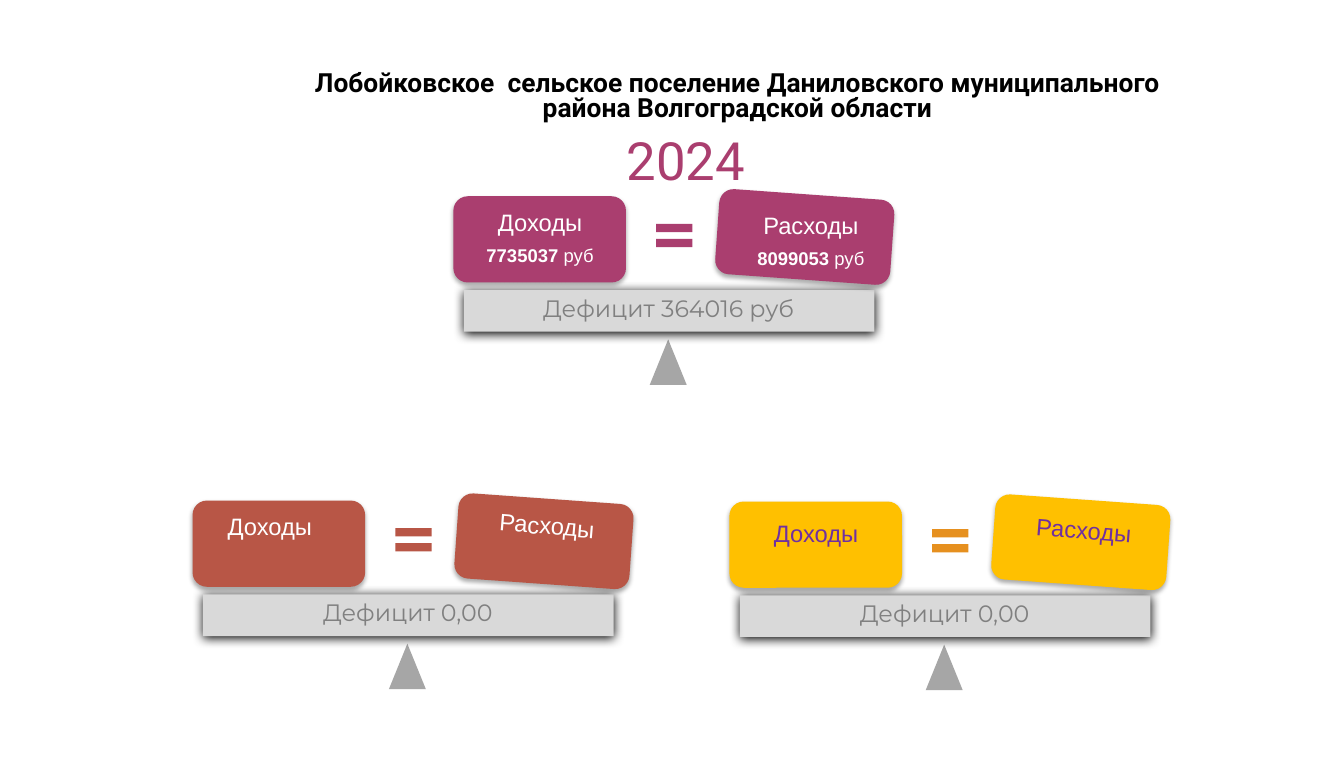
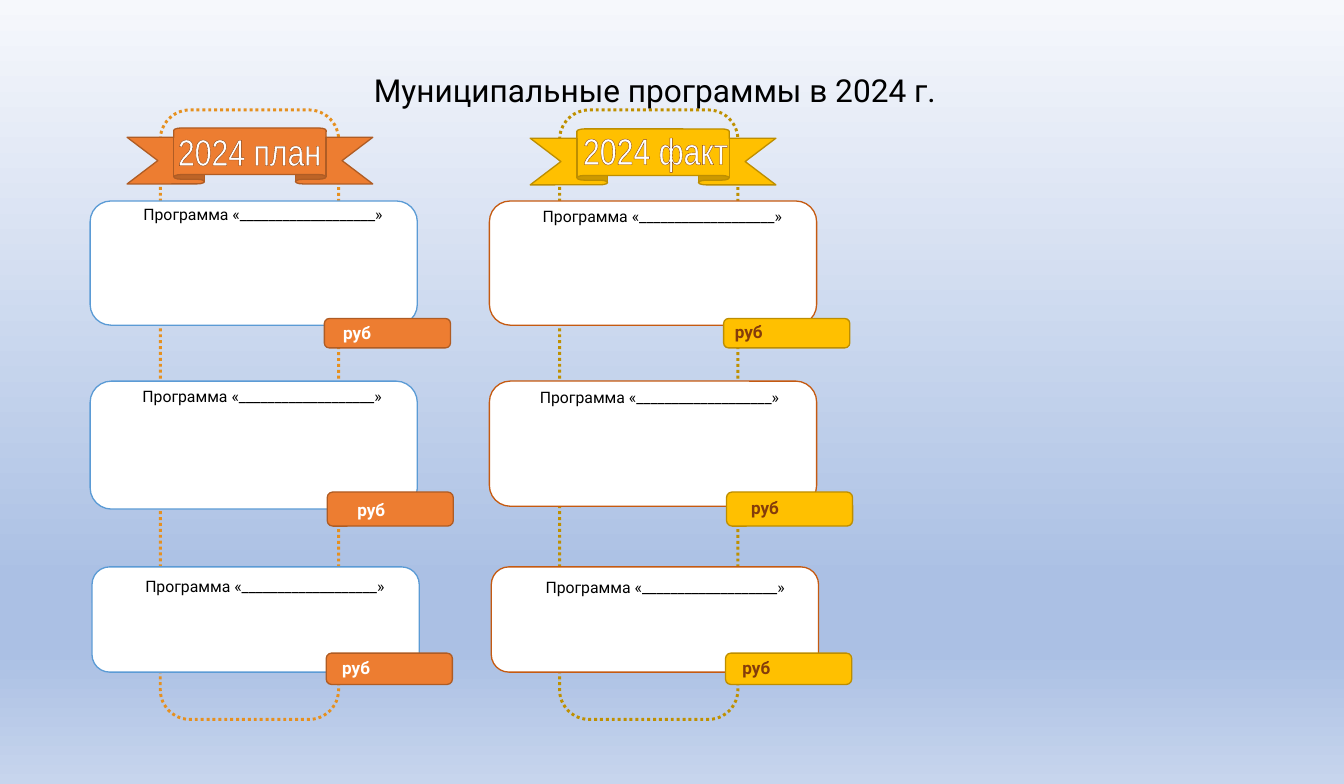
from lxml import etree
from pptx import Presentation
from pptx.dml.color import RGBColor
from pptx.enum.dml import MSO_LINE
from pptx.enum.shapes import MSO_SHAPE
from pptx.enum.text import PP_ALIGN
from pptx.oxml.ns import qn
from pptx.util import Pt

PX = 9144
CARD = MSO_SHAPE.FLOWCHART_ALTERNATE_PROCESS
RECT = MSO_SHAPE.RECTANGLE
WEDGE = MSO_SHAPE.ISOSCELES_TRIANGLE
EQUAL = MSO_SHAPE.MATH_EQUAL
RIBBON = MSO_SHAPE.UP_RIBBON
DOTS = MSO_LINE.ROUND_DOT
CENTER = PP_ALIGN.CENTER
JUSTIFY = PP_ALIGN.JUSTIFY

WHITE = RGBColor(0xFF, 0xFF, 0xFF)
BLACK = RGBColor(0, 0, 0)
PLUM = RGBColor(0xAA, 0x3E, 0x6F)
BRICK = RGBColor(0xB8, 0x56, 0x46)
GOLD = RGBColor(0xFF, 0xC0, 0x00)
AMBER = RGBColor(0xE6, 0x90, 0x1F)
VIOLET = RGBColor(0x70, 0x30, 0xA0)
SILVER = RGBColor(0xD9, 0xD9, 0xD9)
GREY = RGBColor(0xA6, 0xA6, 0xA6)
SLATE = RGBColor(0x80, 0x80, 0x80)
ORANGE = RGBColor(0xED, 0x7D, 0x31)
RUST = RGBColor(0xAF, 0x5C, 0x24)
SKY = RGBColor(0x5B, 0x9B, 0xD5)
COPPER = RGBColor(0xC5, 0x5A, 0x11)
OLIVE = RGBColor(0xBF, 0x90, 0x00)
MUSTARD = RGBColor(0xBD, 0x8E, 0x00)
BROWN = RGBColor(0x84, 0x3C, 0x0B)
MIST = RGBColor(0xF6, 0xF8, 0xFC)
HAZE = RGBColor(0xAB, 0xC0, 0xE4)
ICE = RGBColor(0xC7, 0xD5, 0xED)

SOFT = (32, 3.5, 2.2)
HARD = (100, 8.5, 1)


def add(parent, tag, **attrs):
    return etree.SubElement(parent, qn(tag), {k: str(v) for k, v in attrs.items()})


class Deck:
    font = "Roboto"

    def __init__(self, width, height):
        self.prs = Presentation()
        self.prs.slide_width = width * PX
        self.prs.slide_height = height * PX

    def page(self):
        self.slide = self.prs.slides.add_slide(self.prs.slide_layouts[6])

    def fade(self, stops):
        fill = self.slide.background.fill
        fill.gradient()
        fill.gradient_angle = 270
        group = self.slide.element.xpath(".//a:gsLst")[0]
        for old in list(group):
            group.remove(old)
        for pos, color in stops:
            stop = add(group, "a:gs", pos=pos * 1000)
            add(stop, "a:srgbClr", val=color)

    def shape(self, kind, box, fill=None, line=None, width=1, dash=None,
              shade=None, turn=0, adj=()):
        item = self.slide.shapes.add_shape(kind, *(v * PX for v in box))
        item.rotation = turn
        item.shadow.inherit = False
        for i, value in enumerate(adj):
            item.adjustments[i] = value
        if fill is None:
            item.fill.background()
        else:
            item.fill.solid()
            item.fill.fore_color.rgb = fill
        if line is None:
            item.line.fill.background()
        else:
            item.line.color.rgb = line
            item.line.width = Pt(width)
            if dash is not None:
                item.line.dash_style = dash
        if shade:
            self.shade(item, *shade)

    def shade(self, item, alpha, blur, dist):
        effects = item.element.spPr.find(qn("a:effectLst"))
        outer = add(effects, "a:outerShdw", blurRad=Pt(blur), dist=Pt(dist),
                    dir=5400000, algn="t", rotWithShape=0)
        color = add(outer, "a:srgbClr", val=BLACK)
        add(color, "a:alpha", val=alpha * 1000)

    def text(self, box, words, size, color, font=None, bold=None,
             align=CENTER, left=0, first=0, lead=None, after=None, turn=0):
        item = self.slide.shapes.add_textbox(*(v * PX for v in box))
        item.rotation = turn
        item.text_frame.word_wrap = True
        para = item.text_frame.paragraphs[0]
        para.add_run().text = words
        self.style(para, size, color, font, bold, align, after)
        if lead:
            para.line_spacing = lead
        if left or first:
            props = para._p.get_or_add_pPr()
            props.set("marL", str(left * PX))
            props.set("indent", str(first * PX))
        return item.text_frame

    def style(self, para, size, color, font, bold, align, after):
        para.alignment = align
        if after is not None:
            para.space_after = Pt(after)
        para.font.name = font or self.font
        para.font.size = Pt(size)
        para.font.color.rgb = color
        if bold is not None:
            para.font.bold = bold

    def title(self, box, words, size, lead, bold=False):
        self.text(box, words, size, BLACK, bold=bold, left=50, lead=lead)

    def label(self, box, words, color, sum=None, turn=0):
        frame = self.text(box, words, 18, color, "Arial", after=6, turn=turn)
        if sum:
            para = frame.add_paragraph()
            for part, bold in ((sum + " ", True), ("руб", False)):
                run = para.add_run()
                run.text = part
                run.font.bold = bold
            self.style(para, 14, color, "Arial", None, CENTER, 6)

    def scale(self, x, y, fill, sign, ink, gap, gain, cost, sums=(None, None), turn=0):
        self.shape(WEDGE, (x + 207, y + 151, 39, 48), GREY)
        self.shape(RECT, (x + 11, y + 99, 433, 44), SILVER, shade=HARD)
        self.text((x + 41, y + 98, 372, 42), "Дефицит " + gap, 18, SLATE, "Montserrat")
        self.shape(CARD, (x, y, 182, 91), fill, shade=SOFT)
        self.shape(CARD, (x + 278, y - 2, 185, 90), fill, shade=SOFT, turn=4.1)
        for word, (dx, dy, w), sum, tilt in (("Доходы", gain, sums[0], 0),
                                             ("Расходы", cost, sums[1], turn)):
            self.label((x + dx, y + dy, w, 72), word, ink, sum, tilt)
        self.shape(EQUAL, (x + 207, y + 23, 52, 37), sign, adj=(0.235, 0.195))

    def banner(self, x, y, fill, edge, words, box):
        self.shape(RIBBON, (x, y, 259, 59), fill, edge, adj=(0.167, 0.62))
        frame = self.text(box, words, 28, WHITE, "Arial Narrow")
        props = frame.paragraphs[0].runs[0]._r.get_or_add_rPr()
        line = add(props, "a:ln", w=Pt(0.75))
        add(add(line, "a:solidFill"), "a:srgbClr", val=BROWN)

    def program(self, card, tag, name, cash, fill, edge, rim, ink):
        self.shape(CARD, card, WHITE, rim)
        self.shape(CARD, tag, fill, edge)
        self.text((*name, 357, 30), "Программа «___________________»", 12, BLACK, first=20)
        self.text((*cash, 160, 32), "руб", 13, ink, bold=True, align=JUSTIFY, first=20)


def budget(deck):
    deck.page()
    deck.text((639, 130, 168, 80), "2024", 40, PLUM)
    deck.title((225, 71, 1055, 64),
               "Лобойковское  сельское поселение Даниловского муниципального "
               "района Волгоградской области", 20, 0.8, True)
    deck.scale(478, 207, PLUM, PLUM, WHITE, "364016 руб",
               (3, 7, 177), (285, 10, 184), ("7735037", "8099053"))
    deck.scale(203, 528, BRICK, BRICK, WHITE, "0,00",
               (-7, 7, 177), (284, 6, 177), turn=4.7)
    deck.scale(769, 529, GOLD, AMBER, VIOLET, "0,00",
               (3, 13, 177), (284, 10, 177), turn=4.7)


def plans(deck):
    deck.page()
    deck.fade(((0, MIST), (74, HAZE), (83, HAZE), (100, ICE)))
    step = 421
    rows = ((95, 212, 342, 336, 31), (95, 402, 345, 519, 36), (97, 598, 344, 689, 33))
    plan = ((131, (89, 211), (332, 335)),
            (135, (88, 403), (347, 522)),
            (111, (91, 603), (331, 688)))
    fact = ((131, (510, 213), (745, 334)),
            (132, (507, 404), (762, 520)),
            (111, (513, 605), (753, 688)))
    cols = ((plan, AMBER, (ORANGE, RUST), SKY, WHITE,
             (134, 135), "2024 план", (165, 131, 196, 57)),
            (fact, OLIVE, (GOLD, MUSTARD), COPPER, BROWN,
             (559, 136), "2024 факт", (588, 130, 206, 57)))
    for i, (cells, dots, tones, rim, ink, spot, words, box) in enumerate(cols):
        dx = i * step
        deck.shape(CARD, (169 + dx, 116, 188, 643), line=dots, width=2.25, dash=DOTS)
        deck.banner(*spot, *tones, words, box)
        for (x, y, tx, ty, th), (high, name, cash) in zip(rows, cells):
            deck.program((x + dx, y, 345, high), (tx + dx, ty, 133, th),
                         name, cash, *tones, rim, ink)
    deck.title((97, 64, 1137, 54), "Муниципальные программы в 2024 г.", 24, 1.15)


def main():
    deck = Deck(1417, 827)
    budget(deck)
    plans(deck)
    deck.prs.save("out.pptx")


if __name__ == "__main__":
    main()
